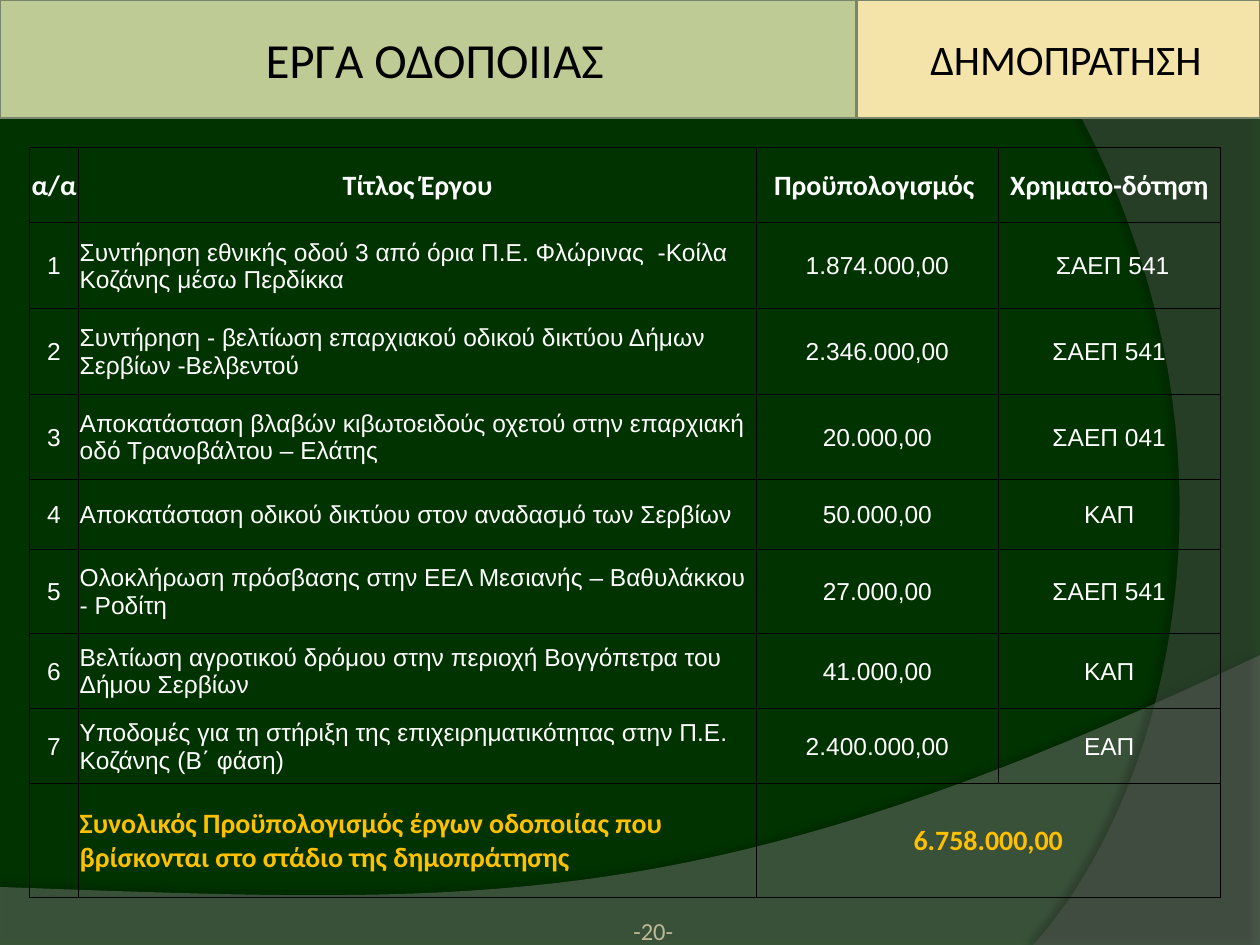
from lxml.etree import SubElement
from pptx import Presentation
from pptx.dml.color import RGBColor
from pptx.enum.shapes import MSO_SHAPE
from pptx.enum.text import MSO_ANCHOR as Anchor, MSO_AUTO_SIZE as AutoSize, PP_ALIGN as Align
from pptx.oxml.ns import qn
from pptx.util import Pt

COLORS = {
    "background": "003300", "wave": "7F7F7F", "arc": "5E5E5E",
    "title": "BECB95", "stage": "F5E4A9", "edge": "7A866C",
    "black": "000000", "white": "FFFFFF", "total": "FFC000", "number": "BCB995",
}
COLUMN_WIDTHS = [28, 387.4, 138.3, 126.7]
ROW_HEIGHTS = [42.9, 49.1, 49.1, 48.6, 40, 48, 42.9, 42.9, 65]
HEADINGS = ("α/α", "Τίτλος Έργου", "Προϋπολογισμός ", "Χρηματο-δότηση")
PROJECTS = [
    ("Συντήρηση εθνικής οδού 3 από όρια Π.Ε. Φλώρινας  -Κοίλα Κοζάνης μέσω Περδίκκα",
     "1.874.000,00", " ΣΑΕΠ 541"),
    ("Συντήρηση - βελτίωση επαρχιακού οδικού δικτύου Δήμων Σερβίων -Βελβεντού",
     "2.346.000,00", "ΣΑΕΠ 541"),
    ("Αποκατάσταση βλαβών κιβωτοειδούς οχετού στην επαρχιακή οδό Τρανοβάλτου – Ελάτης",
     "20.000,00", "ΣΑΕΠ 041"),
    ("Αποκατάσταση οδικού δικτύου στον αναδασμό των Σερβίων", "50.000,00", "ΚΑΠ"),
    ("Ολοκλήρωση πρόσβασης στην ΕΕΛ Μεσιανής – Βαθυλάκκου - Ροδίτη",
     "27.000,00", "ΣΑΕΠ 541"),
    ("Βελτίωση αγροτικού δρόμου στην περιοχή Βογγόπετρα του Δήμου Σερβίων",
     "41.000,00", "ΚΑΠ"),
    ("Υποδομές για τη στήριξη της επιχειρηματικότητας στην Π.Ε. Κοζάνης (Β΄ φάση)",
     "2.400.000,00", "ΕΑΠ"),
]
TOTAL = ("Συνολικός Προϋπολογισμός έργων οδοποιίας που βρίσκονται στο στάδιο της δημοπράτησης",
         "6.758.000,00")


def rgb(name):
    return RGBColor.from_string(COLORS[name])


def write(frame, text, size=14, font="Calibri", color="white", bold=False,
          align=Align.CENTER, before=0):
    frame.word_wrap = True
    paragraph = frame.paragraphs[0]
    paragraph.alignment = align
    paragraph.space_before = Pt(before)
    run = paragraph.add_run()
    run.text = text
    run.font.size = Pt(size)
    run.font.name = font
    run.font.bold = bold
    run.font.color.rgb = rgb(color)


def place(shape, box):
    shape.left, shape.top, shape.width, shape.height = map(Pt, box)


def add_color(parent, name, alpha):
    color = SubElement(parent, qn("a:srgbClr"), val=COLORS[name])
    SubElement(color, qn("a:alpha"), val=str(alpha * 1000))


def bezier(start, first, second, end, steps=40):
    for step in range(1, steps + 1):
        t = step / steps
        u = 1 - t
        yield tuple(u**3 * a + 3 * u * u * t * b + 3 * u * t * t * c + t**3 * d
                    for a, b, c, d in zip(start, first, second, end))


def add_sweep(slide, box, corners, curve, color, alpha, shadow_alpha, distance, direction):
    left, top, width, height = box
    points = [(left + x * width, top + y * height)
              for x, y in [*corners, *bezier(*curve)]]
    builder = slide.shapes.build_freeform(*map(Pt, points[0]))
    builder.add_line_segments([(Pt(x), Pt(y)) for x, y in points[1:]], close=True)
    sweep = builder.convert_to_shape()
    sweep.line.fill.background()
    sweep.fill.solid()
    sweep.fill.fore_color.rgb = rgb(color)
    base = sweep.fill._xPr.find(qn("a:solidFill")).find(qn("a:srgbClr"))
    SubElement(base, qn("a:alpha"), val=str(alpha * 1000))
    effects = SubElement(sweep._element.spPr, qn("a:effectLst"))
    shadow = SubElement(effects, qn("a:outerShdw"), blurRad=str(Pt(4)),
                        dist=str(Pt(distance)), dir=str(direction * 60000),
                        algn="ctr", rotWithShape="0")
    add_color(shadow, "black", shadow_alpha)


def add_backdrop(slide):
    slide.background.fill.solid()
    slide.background.fill.fore_color.rgb = rgb("background")
    add_sweep(slide, (0, 374.4, 720, 165.6), [(0, 0.8), (0, 1), (1, 1), (1, 0)],
              [(1, 0), (0.56, 0.91), (0.39, 0.86), (0, 0.8)],
              "wave", 45, 35, 3.5, 270)
    add_sweep(slide, (576, 0, 144, 540), [(1, 0), (1, 1), (0.1, 1)],
              [(0.1, 1), (0.68, 0.83), (1.09, 0.4), (0, 0)],
              "arc", 40, 45, 4, 180)


def style_panel(panel, box, fill, indent):
    place(panel, box)
    panel.shadow.inherit = False
    panel.fill.solid()
    panel.fill.fore_color.rgb = rgb(fill)
    panel.line.color.rgb = rgb("edge")
    panel.line.width = Pt(1.5)
    panel.text_frame.auto_size = AutoSize.NONE
    panel.text_frame.vertical_anchor = Anchor.MIDDLE
    panel.text_frame.margin_left = Pt(indent)


def add_header(slide, box):
    left, top, width, height = box
    title_width = width * 0.68
    title = slide.shapes.title
    style_panel(title, (left, top, title_width, height), "title", 14.4)
    write(title.text_frame, "ΕΡΓΑ ΟΔΟΠΟΙΙΑΣ", size=28, color="black")
    stage = slide.shapes.add_shape(MSO_SHAPE.RECTANGLE, 0, 0, 0, 0)
    style_panel(stage, (left + title_width, top, width - title_width, height), "stage", 42)
    write(stage.text_frame, "ΔΗΜΟΠΡΑΤΗΣΗ", size=24, color="black",
          align=Align.LEFT, before=7)


def style_cell(cell):
    cell.vertical_anchor = Anchor.MIDDLE
    cell.margin_left = cell.margin_right = cell.margin_top = Pt(0.7)
    cell.margin_bottom = 0
    properties = cell._tc.get_or_add_tcPr()
    for side in ("lnL", "lnR", "lnT", "lnB"):
        border = SubElement(properties, qn(f"a:{side}"), w=str(Pt(0.5)))
        add_color(SubElement(border, qn("a:solidFill")), "black", 100)
    cell.fill.background()


def add_projects(slide, box):
    rows = [HEADINGS]
    rows += [(str(number), *project) for number, project in enumerate(PROJECTS, 1)]
    rows.append(("", *TOTAL, ""))
    table = slide.shapes.add_table(len(rows), len(HEADINGS), *map(Pt, box)).table
    table.first_row = table.horz_banding = False
    for column, width in zip(table.columns, COLUMN_WIDTHS):
        column.width = Pt(width)
    for row, height in zip(table.rows, ROW_HEIGHTS):
        row.height = Pt(height)
    last = len(rows) - 1
    heading = dict(size=16, bold=True)
    formats = {0: heading, last: dict(heading, color="total")}
    for r, texts in enumerate(rows):
        for c, text in enumerate(texts):
            cell = table.cell(r, c)
            style_cell(cell)
            if text:
                align = Align.LEFT if c == 1 and r > 0 else Align.CENTER
                write(cell.text_frame, text, align=align,
                      **formats.get(r, dict(font="Arial")))
    table.cell(last, 2).merge(table.cell(last, 3))


def add_page_number(slide, box):
    frame = slide.shapes.add_textbox(*map(Pt, box)).text_frame
    frame.margin_left = frame.margin_right = frame.margin_top = frame.margin_bottom = 0
    frame.vertical_anchor = Anchor.BOTTOM
    write(frame, "-20-", color="number")


def main():
    deck = Presentation()
    deck.slide_width, deck.slide_height = Pt(720), Pt(540)
    slide = deck.slides.add_slide(deck.slide_layouts[5])
    add_backdrop(slide)
    add_projects(slide, (16.9, 84.4, sum(COLUMN_WIDTHS), sum(ROW_HEIGHTS)))
    add_header(slide, (0, 0, 720, 67.5))
    add_page_number(slide, (343.4, 511.2, 59.8, 28.8))
    deck.save("out.pptx")


if __name__ == "__main__":
    main()
